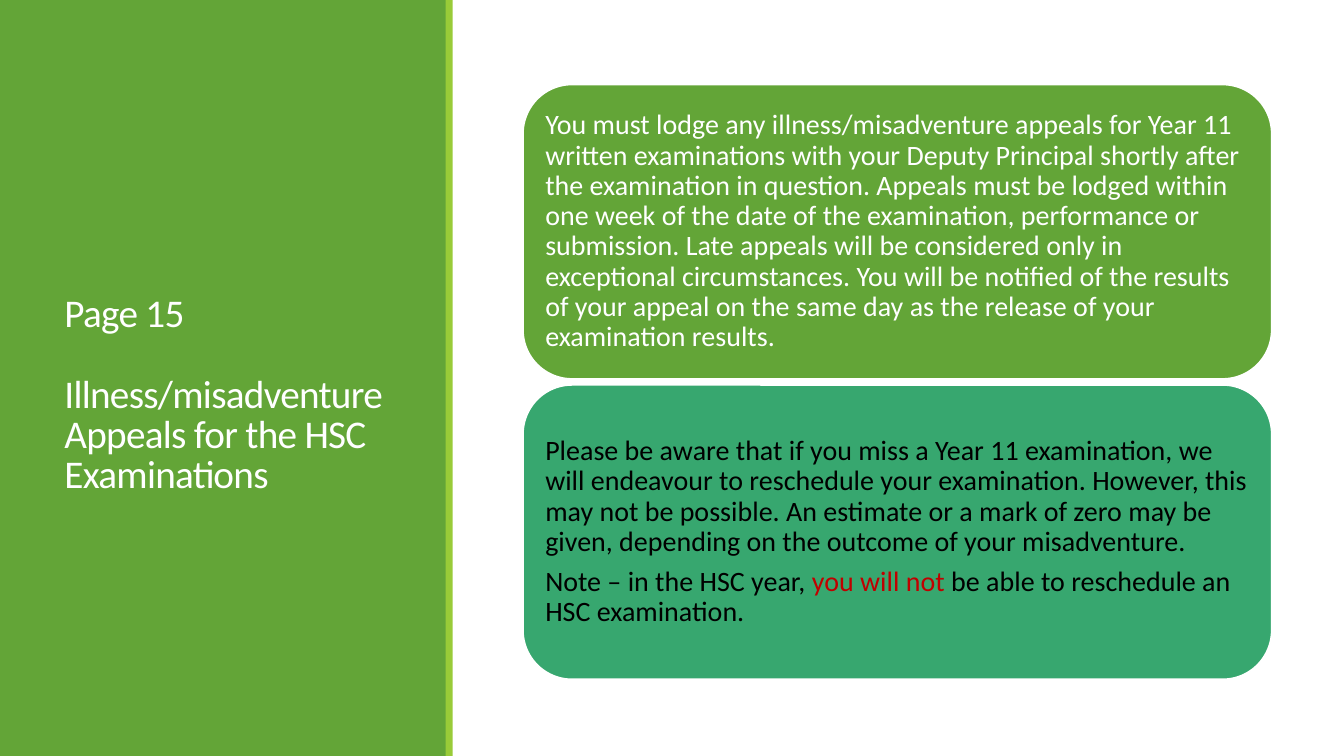
"""Build the slide on illness and misadventure appeals."""
from dataclasses import dataclass

from pptx import Presentation
from pptx.dml.color import RGBColor
from pptx.enum.shapes import MSO_SHAPE
from pptx.enum.text import MSO_ANCHOR, MSO_AUTO_SIZE, PP_ALIGN
from pptx.util import Cm, Pt

RECTANGLE = MSO_SHAPE.RECTANGLE
ROUNDED = MSO_SHAPE.ROUNDED_RECTANGLE
MIDDLE = MSO_ANCHOR.MIDDLE
LEFT = PP_ALIGN.LEFT
NO_AUTOFIT = MSO_AUTO_SIZE.NONE


@dataclass(frozen=True)
class Theme:
    font: str = "Calibri"
    white: str = "FFFFFF"
    black: str = "000000"
    green: str = "63A537"
    lime: str = "99CB38"
    teal: str = "37A76F"
    red: str = "C00000"
    title_size: float = 28
    body_size: float = 20
    outline: float = 1.25


THEME = Theme()

HEADING = ["Page 15", "Illness/misadventure Appeals for the HSC Examinations"]

CARDS = [
    (THEME.green, [
        [("You must lodge any illness/misadventure appeals for Year 11 written "
          "examinations with your Deputy Principal shortly after the examination "
          "in question. Appeals must be lodged within one week of the date of the "
          "examination, performance or submission. Late appeals will be considered "
          "only in exceptional circumstances. You will be notified of the results "
          "of your appeal on the same day as the release of your examination "
          "results.", THEME.white)],
    ]),
    (THEME.teal, [
        [("Please be aware that if you miss a Year 11 examination, we will "
          "endeavour to reschedule your examination. However, this may not be "
          "possible. An estimate or a mark of zero may be given, depending on the "
          "outcome of your misadventure.", THEME.black)],
        [("Note – in the HSC year, ", THEME.black),
         ("you will not ", THEME.red),
         ("be able to reschedule an HSC examination.", THEME.black)],
    ]),
]

SLIDE_WIDTH, SLIDE_HEIGHT = 33.87, 19.05
PANEL_WIDTH = 11.25
STRIPE_LEFT, STRIPE_WIDTH = 11.23, 0.18
TITLE_BOX = (1.37, 1.45, 8.56, 16.03)
TITLE_TOP_INSET = 1.14
CARD_LEFT, CARD_TOP, CARD_WIDTH, CARD_HEIGHT = 13.18, 2.13, 18.87, 7.42
CARD_GAP, CARD_INSET = 0.15, 0.2


def add_block(slide, preset, box, color):
    block = slide.shapes.add_shape(preset, *map(Cm, box))
    block.shadow.inherit = False
    block.fill.solid()
    block.fill.fore_color.rgb = RGBColor.from_string(color)
    block.line.fill.background()
    return block


def format_run(run, size, color):
    run.font.name = THEME.font
    run.font.size = Pt(size)
    run.font.color.rgb = RGBColor.from_string(color)


def place_title(slide):
    title = slide.shapes.title
    title.left, title.top, title.width, title.height = map(Cm, TITLE_BOX)
    frame = title.text_frame
    frame.text = "\n".join(HEADING)
    frame.word_wrap = True
    frame.auto_size = NO_AUTOFIT
    frame.vertical_anchor = MIDDLE
    frame.margin_top = Cm(TITLE_TOP_INSET)
    for index, paragraph in enumerate(frame.paragraphs):
        paragraph.alignment = LEFT
        paragraph.line_spacing = 0.85
        paragraph.space_before = Pt(29 * index)
        for run in paragraph.runs:
            format_run(run, THEME.title_size, THEME.white)
            run.font._element.set("spc", "-50")
    return title


def add_card(slide, index, color, paragraphs):
    top = CARD_TOP + index * (CARD_HEIGHT + CARD_GAP)
    card = add_block(slide, ROUNDED, (CARD_LEFT, top, CARD_WIDTH, CARD_HEIGHT), color)
    card.line.color.rgb = RGBColor.from_string(THEME.white)
    card.line.width = Pt(THEME.outline)
    frame = card.text_frame
    frame.word_wrap = True
    frame.vertical_anchor = MIDDLE
    frame.margin_left = frame.margin_right = Cm(CARD_INSET)
    frame.margin_top = frame.margin_bottom = Cm(CARD_INSET)
    frame.text = "\n".join("" for _ in paragraphs)
    for paragraph, pieces in zip(frame.paragraphs, paragraphs):
        paragraph.alignment = LEFT
        paragraph.line_spacing = 0.9
        paragraph.space_after = Pt(7)
        for words, text_color in pieces:
            run = paragraph.add_run()
            run.text = words
            format_run(run, THEME.body_size, text_color)


def main():
    deck = Presentation()
    deck.slide_width, deck.slide_height = Cm(SLIDE_WIDTH), Cm(SLIDE_HEIGHT)
    slide = deck.slides.add_slide(deck.slide_layouts[5])
    title = place_title(slide)
    panel = add_block(slide, RECTANGLE, (0, 0, PANEL_WIDTH, SLIDE_HEIGHT), THEME.green)
    title.element.addprevious(panel.element)
    add_block(slide, RECTANGLE, (STRIPE_LEFT, 0, STRIPE_WIDTH, SLIDE_HEIGHT), THEME.lime)
    for index, (color, paragraphs) in enumerate(CARDS):
        add_card(slide, index, color, paragraphs)
    deck.save("out.pptx")


if __name__ == "__main__":
    main()
